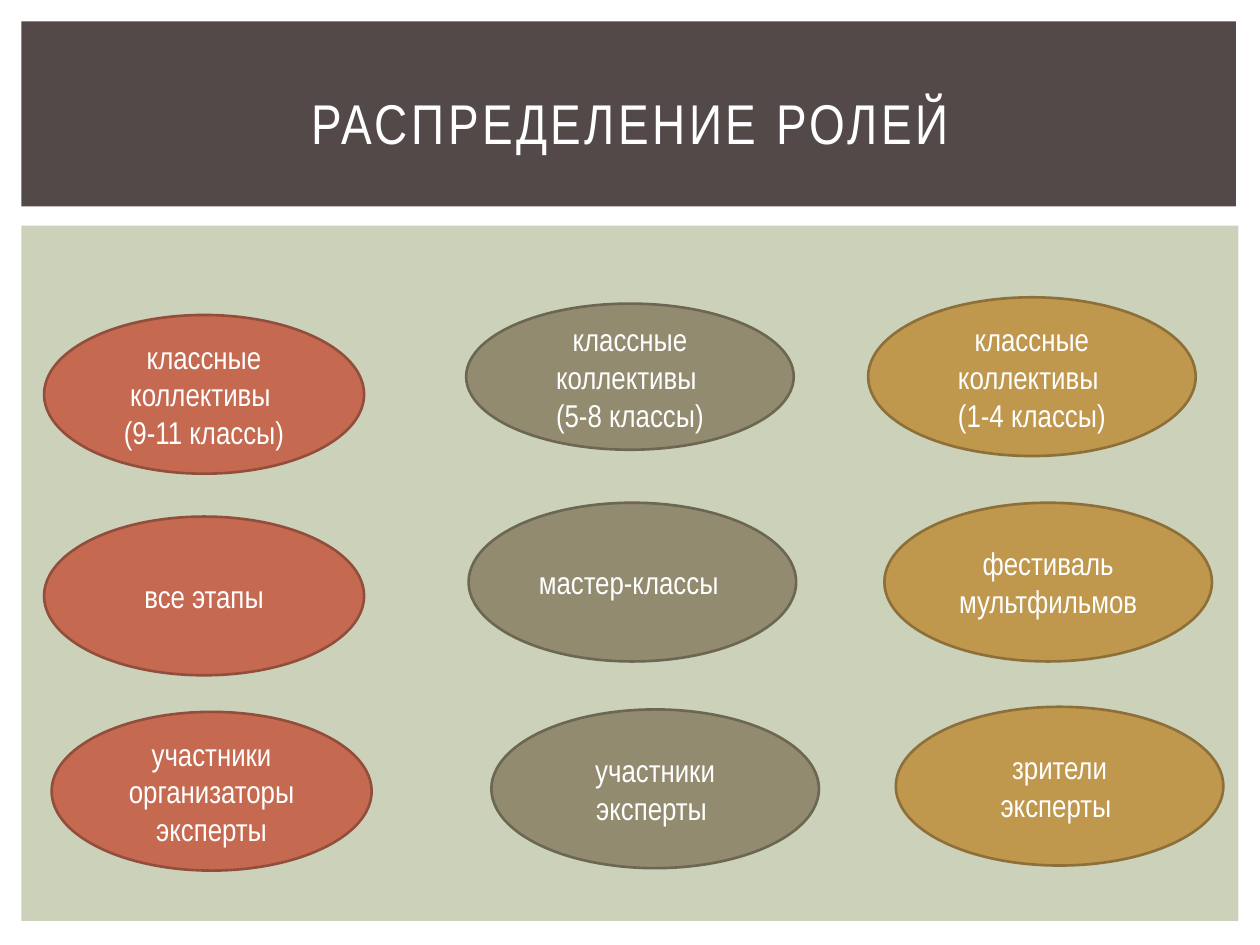
from dataclasses import dataclass
from typing import NamedTuple

from pptx import Presentation
from pptx.dml.color import RGBColor
from pptx.enum.shapes import MSO_SHAPE
from pptx.enum.text import MSO_ANCHOR, PP_ALIGN
from pptx.util import Pt

RECTANGLE, OVAL = MSO_SHAPE.RECTANGLE, MSO_SHAPE.OVAL
MIDDLE, CENTER = MSO_ANCHOR.MIDDLE, PP_ALIGN.CENTER


class Box(NamedTuple):
    left: float
    top: float
    width: float
    height: float

    def inner(self, left, top, width, height):
        return Box(self.left + left, self.top + top, width, height)

    def lengths(self):
        return [Pt(value) for value in self]


@dataclass(frozen=True)
class Theme:
    font: str = "Arial Narrow"
    title_size: float = 32
    role_size: float = 18
    outline: float = 1.5
    title_spacing: float = 2
    text: str = "FFFFFF"
    banner: str = "534949"
    panel: str = "CCD1B9"
    senior: tuple = ("C66951", "924E3C")
    middle: tuple = ("928B70", "6C6753")
    junior: tuple = ("BF974D", "8D7039")


THEME = Theme()
BANNER = Box(12.2, 12.2, 694.1, 105.8)
PANEL = Box(12.2, 128.9, 695.5, 397.4)
ROLE_HEIGHT = 90.7

GROUPS = [
    (THEME.senior, 182.9, [
        (13, 51.1, ROLE_HEIGHT, ["классные коллективы ", "(9-11 классы)"]),
        (13, 166.3, ROLE_HEIGHT, ["все этапы"]),
        (17.3, 277.9, ROLE_HEIGHT, ["участники", "организаторы", "эксперты"]),
    ]),
    (THEME.middle, 187.2, [
        (254.2, 44.6, 83.5, ["классные коллективы ", "(5-8 классы)"]),
        (255.6, 158.4, ROLE_HEIGHT, ["мастер-классы "]),
        (268.6, 276.5, ROLE_HEIGHT, ["участники эксперты "]),
    ]),
    (THEME.junior, 187.2, [
        (483.9, 41, ROLE_HEIGHT, ["классные коллективы ", "(1-4 классы)"]),
        (493.2, 158.4, ROLE_HEIGHT, ["фестиваль мультфильмов"]),
        (499.7, 275, ROLE_HEIGHT, ["зрители", "эксперты "]),
    ]),
]


def add_filled(slide, kind, box, fill, outline=None):
    figure = slide.shapes.add_shape(kind, *box.lengths())
    figure.shadow.inherit = False
    figure.fill.solid()
    figure.fill.fore_color.rgb = RGBColor.from_string(fill)
    if outline:
        figure.line.color.rgb = RGBColor.from_string(outline)
        figure.line.width = Pt(THEME.outline)
    else:
        figure.line.fill.background()
    return figure


def write_lines(frame, lines, size):
    frame.word_wrap = True
    frame.vertical_anchor = MIDDLE
    for index, line in enumerate(lines):
        paragraph = frame.add_paragraph() if index else frame.paragraphs[0]
        paragraph.text = line
        paragraph.alignment = CENTER
        paragraph.font.name = THEME.font
        paragraph.font.size = Pt(size)
        paragraph.font.color.rgb = RGBColor.from_string(THEME.text)


def add_banner(slide, box):
    add_filled(slide, RECTANGLE, box, THEME.banner)
    heading = slide.shapes.add_textbox(*box.inner(18, 15.9, 660.2, 82.8).lengths())
    write_lines(heading.text_frame, ["РАСПРЕДЕЛЕНИЕ РОЛЕЙ"], THEME.title_size)
    run = heading.text_frame.paragraphs[0].runs[0]
    run.font._element.set("spc", str(int(THEME.title_spacing * 100)))


def add_roles(slide, box):
    add_filled(slide, RECTANGLE, box, THEME.panel)
    for (fill, outline), width, roles in GROUPS:
        for left, top, height, lines in roles:
            role = add_filled(slide, OVAL, box.inner(left, top, width, height), fill, outline)
            write_lines(role.text_frame, lines, THEME.role_size)


def main():
    presentation = Presentation()
    presentation.slide_width, presentation.slide_height = Pt(720), Pt(540)
    slide = presentation.slides.add_slide(presentation.slide_layouts[6])
    add_banner(slide, BANNER)
    add_roles(slide, PANEL)
    presentation.save("out.pptx")


if __name__ == "__main__":
    main()
